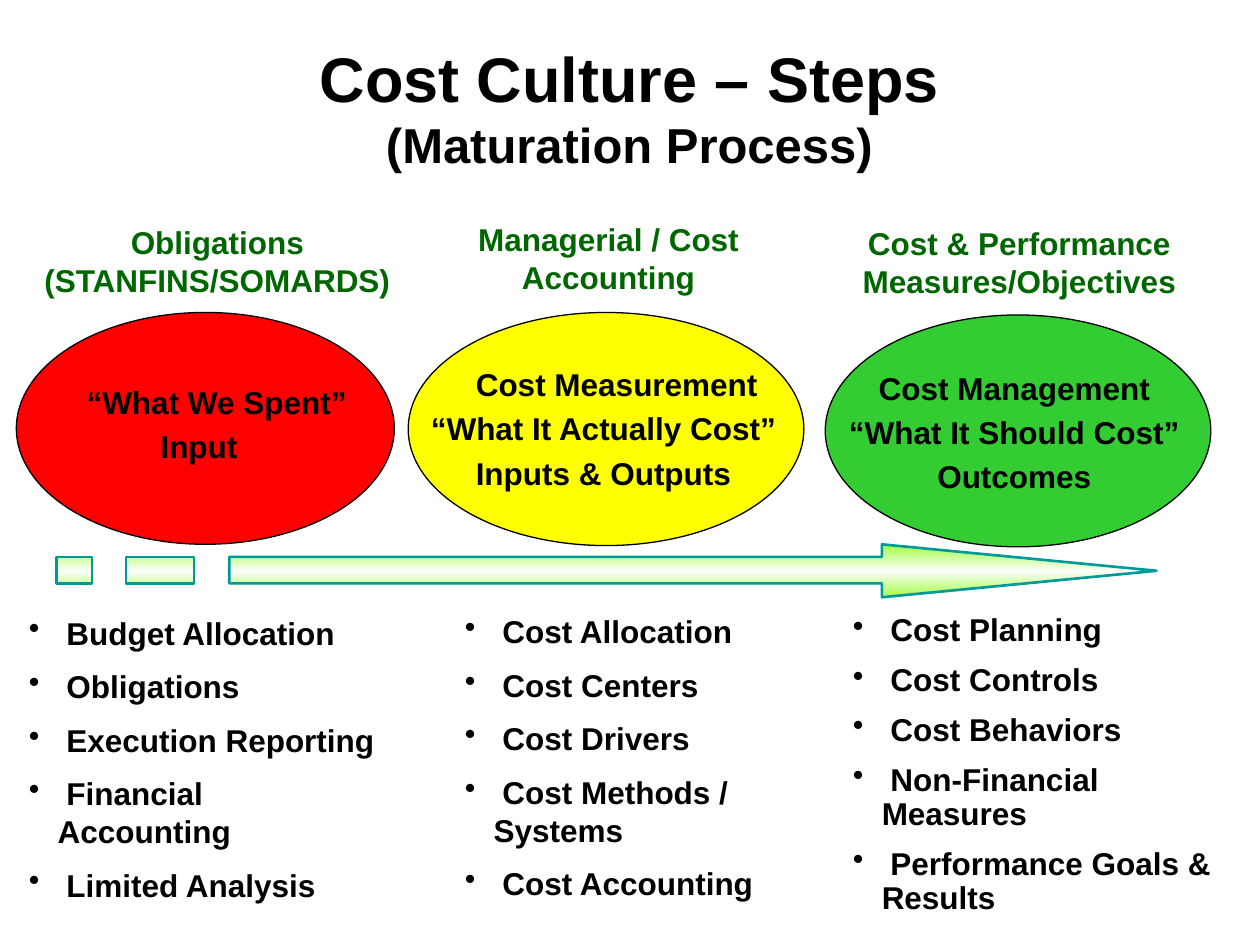
import pptx
import pptx.util
import pptx.dml.color
import pptx.enum.shapes
import pptx.enum.text
import pptx.oxml
import pptx.oxml.ns
from lxml import etree

Inches, Pt = pptx.util.Inches, pptx.util.Pt
RGB = pptx.dml.color.RGBColor.from_string
Align = pptx.enum.text.PP_ALIGN
Anchor = pptx.enum.text.MSO_ANCHOR

THEME = {
    "font": "Arial", "text": "000000", "heading": "006600", "outline": "000000",
    "arrow_line": "009999", "arrow_edge": "99FF33", "arrow_middle": "FFFFFF",
    "title_size": 36, "subtitle_size": 28, "size": 18,
}
TITLE = [("Cost Culture – Steps", THEME["title_size"]),
         ("(Maturation Process)", THEME["subtitle_size"])]
TITLE_BOX = (1.33, 0.26, 7.33, 0.91)

# Boxes are left, top, width, height in inches; "shift" indents the first ellipse line.
STEPS = [
    {"heading": "Obligations (STANFINS/SOMARDS)", "heading_box": (0.2, 1.72, 3.05, 0.7),
     "color": "FF0000", "ellipse_box": (0.13, 2.48, 3, 1.84),
     "focus": ["“What We Spent”", "Input"], "focus_box": (0.21, 2.99, 2.74, 0.76),
     "shift": 0.28, "spacing": 1,
     "topics": ["Budget Allocation", "Obligations", "Execution Reporting",
                "Financial Accounting", "Limited Analysis"],
     "topics_box": (0.13, 4.82, 2.98, 2.21)},
    {"heading": "Managerial / Cost Accounting", "heading_box": (3.5, 1.7, 2.66, 0.7),
     "color": "FFFF00", "ellipse_box": (3.24, 2.48, 3.14, 1.85),
     "focus": ["Cost Measurement", "“What It Actually Cost”", "Inputs & Outputs"],
     "focus_box": (3.22, 2.85, 3.14, 1.12), "shift": 0.21, "spacing": 1,
     "topics": ["Cost Allocation", "Cost Centers", "Cost Drivers",
                "Cost Methods / Systems", "Cost Accounting"],
     "topics_box": (3.59, 4.81, 2.65, 2.51)},
    {"heading": "Cost & Performance Measures/Objectives",
     "heading_box": (6.72, 1.73, 2.74, 0.7),
     "color": "33CC33", "ellipse_box": (6.55, 2.5, 3.06, 1.84),
     "focus": ["Cost Management", "“What It Should Cost”", "Outcomes"],
     "focus_box": (6.59, 2.88, 2.92, 1.12), "shift": 0, "spacing": 0.9,
     "topics": ["Cost Planning", "Cost Controls", "Cost Behaviors",
                "Non-Financial Measures", "Performance Goals & Results"],
     "topics_box": (6.67, 4.83, 3.33, 2.33)},
]
HANG = 0.23

ARROW_TOP, ARROW_BOTTOM = 4.32, 4.74
SHAFT_TOP, SHAFT_BOTTOM = 4.42, 4.63
SHAFT_LEFT, HEAD_LEFT, TIP = 1.82, 7, 9.18
DASHES = [(1, 1.54), (0.45, 0.73)]


def inches(values):
    return [Inches(value) for value in values]


def apply(target, values):
    for name, value in values.items():
        setattr(target, name, value)


def indent(paragraph, left, hanging=0):
    properties = paragraph._p.get_or_add_pPr()
    properties.set("marL", str(Inches(left)))
    properties.set("indent", str(-Inches(hanging)))
    return properties


def write(paragraph, text, color, size=THEME["size"]):
    run = paragraph.add_run()
    run.text = text
    apply(run.font, {"name": THEME["font"], "size": Pt(size), "bold": True})
    run.font.color.rgb = RGB(color)


def add_lines(slide, box, lines, color, gap, align, spacing=1):
    """Add a text box, one paragraph a line; gap is a share of the type size."""
    frame = slide.shapes.add_textbox(*inches(box)).text_frame
    frame.word_wrap = True
    for index, line in enumerate(lines):
        paragraph = frame.add_paragraph() if index else frame.paragraphs[0]
        apply(paragraph, {"alignment": align, "line_spacing": spacing,
                          "space_before": Pt(gap * THEME["size"] if index else 0)})
        write(paragraph, line, color)
    return frame.paragraphs


def add_title(slide):
    title = slide.shapes.title
    apply(title, dict(zip(("left", "top", "width", "height"), inches(TITLE_BOX))))
    frame = title.text_frame
    apply(frame, {"vertical_anchor": Anchor.TOP, "word_wrap": True,
                  "margin_top": Inches(0.05), "margin_bottom": 0,
                  "auto_size": pptx.enum.text.MSO_AUTO_SIZE.NONE})
    for index, (line, size) in enumerate(TITLE):
        paragraph = frame.add_paragraph() if index else frame.paragraphs[0]
        paragraph.alignment = Align.CENTER
        write(paragraph, line, THEME["text"], size)


def add_step(slide, step):
    ellipse = slide.shapes.add_shape(
        pptx.enum.shapes.MSO_SHAPE.OVAL, *inches(step["ellipse_box"]))
    ellipse.shadow.inherit = False
    ellipse.fill.solid()
    ellipse.fill.fore_color.rgb = RGB(step["color"])
    ellipse.line.color.rgb = RGB(THEME["outline"])
    ellipse.line.width = Pt(0.75)

    add_lines(slide, step["heading_box"], [step["heading"]],
              THEME["heading"], 0.5, Align.CENTER)
    focus = add_lines(slide, step["focus_box"], step["focus"],
                      THEME["text"], 0.2, Align.CENTER)
    indent(focus[0], step["shift"])
    topics = add_lines(slide, step["topics_box"], [f" {topic}" for topic in step["topics"]],
                       THEME["text"], 0.5, Align.LEFT, step["spacing"])
    for topic in topics:
        bullet = etree.SubElement(indent(topic, HANG, HANG), pptx.oxml.ns.qn("a:buChar"))
        bullet.set("char", "•")


def add_arrow(slide):
    arrow_outline = [(HEAD_LEFT, ARROW_TOP), (HEAD_LEFT, SHAFT_TOP),
                     (SHAFT_LEFT, SHAFT_TOP), (SHAFT_LEFT, SHAFT_BOTTOM),
                     (HEAD_LEFT, SHAFT_BOTTOM), (HEAD_LEFT, ARROW_BOTTOM),
                     (TIP, (ARROW_TOP + ARROW_BOTTOM) / 2)]
    dashes = [[(left, SHAFT_TOP), (left, SHAFT_BOTTOM),
               (right, SHAFT_BOTTOM), (right, SHAFT_TOP)] for left, right in DASHES]
    builder = slide.shapes.build_freeform(*inches(arrow_outline[0]))
    for index, outline in enumerate([arrow_outline, *dashes]):
        start, *others = [inches(point) for point in outline]
        if index:
            builder.move_to(*start)
        builder.add_line_segments(others, close=True)
    arrow = builder.convert_to_shape()
    arrow.shadow.inherit = False
    arrow.line.color.rgb = RGB(THEME["arrow_line"])
    arrow.line.width = Pt(1.5)

    arrow.fill.gradient()
    arrow.fill.gradient_angle = 270
    stops = arrow._element.spPr.find(".//" + pptx.oxml.ns.qn("a:gsLst"))
    for stop in list(stops):
        stops.remove(stop)
    edge, middle = THEME["arrow_edge"], THEME["arrow_middle"]
    for position, color, opacity in [(0, edge, 90), (50, middle, 100), (100, edge, 90)]:
        stops.append(pptx.oxml.parse_xml(
            f'<a:gs {pptx.oxml.ns.nsdecls("a")} pos="{position * 1000}">'
            f'<a:srgbClr val="{color}"><a:alpha val="{opacity * 1000}"/></a:srgbClr></a:gs>'))


def main():
    deck = pptx.Presentation()
    deck.slide_width, deck.slide_height = inches((10, 7.5))
    slide = deck.slides.add_slide(deck.slide_layouts.get_by_name("Title Only"))
    add_title(slide)
    for step in STEPS:
        add_step(slide, step)
    add_arrow(slide)
    deck.save("out.pptx")


if __name__ == "__main__":
    main()
